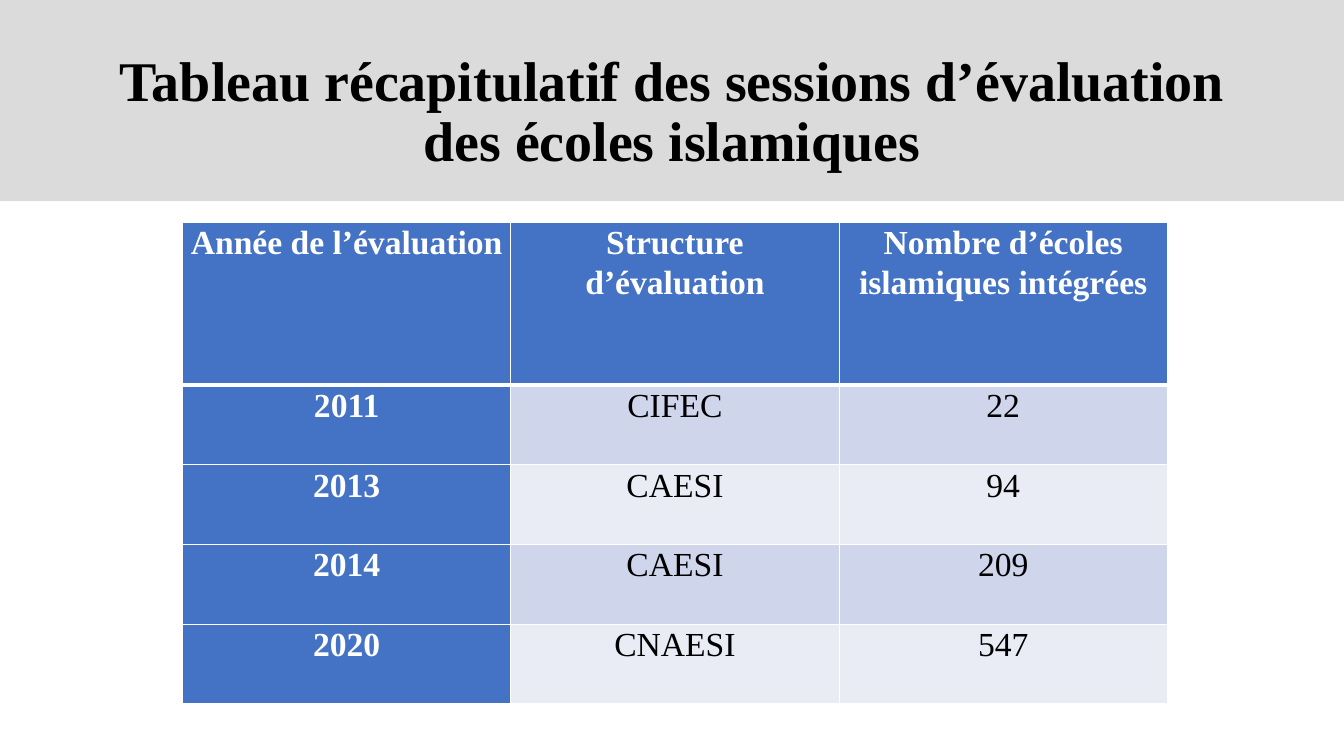
from lxml import etree
from pptx import Presentation
from pptx.dml.color import RGBColor
from pptx.enum.shapes import MSO_SHAPE
from pptx.enum.text import MSO_ANCHOR, PP_ALIGN
from pptx.oxml.ns import qn
from pptx.util import Cm, Pt

RECTANGLE = MSO_SHAPE.RECTANGLE
MIDDLE = MSO_ANCHOR.MIDDLE
CENTER = PP_ALIGN.CENTER

FONT = "Times New Roman"
COLORS = {
    "band": "DBDBDB",
    "blue": "4472C4",
    "odd": "CFD5EA",
    "even": "E9EBF5",
    "white": "FFFFFF",
    "black": "000000",
}
TITLE = "Tableau récapitulatif des sessions d’évaluation des écoles islamiques"
ROWS = [
    ["Année de l’évaluation", "Structure d’évaluation", "Nombre d’écoles islamiques intégrées"],
    ["2011", "CIFEC", "22"],
    ["2013", "CAESI", "94"],
    ["2014", "CAESI", "209"],
    ["2020", "CNAESI", "547"],
]


def color(name):
    return RGBColor.from_string(COLORS[name])


def fill_solid(fill, name):
    fill.solid()
    fill.fore_color.rgb = color(name)


def style_paragraph(p, size, name, bold, spacing):
    p.alignment = CENTER
    p.line_spacing = spacing
    p.font.name = FONT
    p.font.size = Pt(size)
    p.font.bold = bold
    p.font.color.rgb = color(name)


def add_borders(cell, widths):
    tcPr = cell._tc.get_or_add_tcPr()
    for side, width in widths.items():
        ln = etree.SubElement(tcPr, qn(f"a:ln{side}"), w=str(Pt(width)))
        solid = etree.SubElement(ln, qn("a:solidFill"))
        etree.SubElement(solid, qn("a:srgbClr"), val=COLORS["white"])


def add_header(s, left, top, width, height):
    band = s.shapes.add_shape(RECTANGLE, left, top, width, height)
    band.shadow.inherit = False
    fill_solid(band.fill, "band")
    band.line.fill.background()

    margin = Cm(2.33)
    title = s.shapes.add_textbox(left + margin, top + Cm(1.02), width - 2 * margin, Cm(3.68))
    tf = title.text_frame
    tf.word_wrap = True
    tf.vertical_anchor = MIDDLE
    p = tf.paragraphs[0]
    p.text = TITLE
    style_paragraph(p, 40, "black", True, 0.9)


def fill_cell(cell, text, row, col):
    heading = row == 0 or col == 0
    add_borders(cell, {"L": 1, "R": 1, "T": 3 if row == 1 else 1, "B": 3 if row == 0 else 1})
    fill_solid(cell.fill, "blue" if heading else "odd" if row % 2 else "even")
    cell.margin_left = cell.margin_right = Cm(0.19)
    cell.margin_top = cell.margin_bottom = 0
    p = cell.text_frame.paragraphs[0]
    p.text = text
    p.space_after = Pt(8)
    style_paragraph(p, 24, "white" if heading else "black", heading, 1.07)


def add_sessions_table(s, left, top, width, height):
    table = s.shapes.add_table(len(ROWS), len(ROWS[0]), left, top, width, height).table
    table.first_col = True
    for column in table.columns:
        column.width = width // len(ROWS[0])
    head_height = Cm(4.1)
    for i, values in enumerate(ROWS):
        table.rows[i].height = (height - head_height) // (len(ROWS) - 1) if i else head_height
        for j, text in enumerate(values):
            fill_cell(table.cell(i, j), text, i, j)


def main():
    prs = Presentation()
    prs.slide_width = Cm(33.87)
    prs.slide_height = Cm(19.05)
    s = prs.slides.add_slide(prs.slide_layouts[6])
    add_header(s, 0, 0, prs.slide_width, Cm(5.07))
    add_sessions_table(s, Cm(4.6), Cm(5.6), Cm(24.82), Cm(12.14))
    prs.save("out.pptx")


if __name__ == "__main__":
    main()
